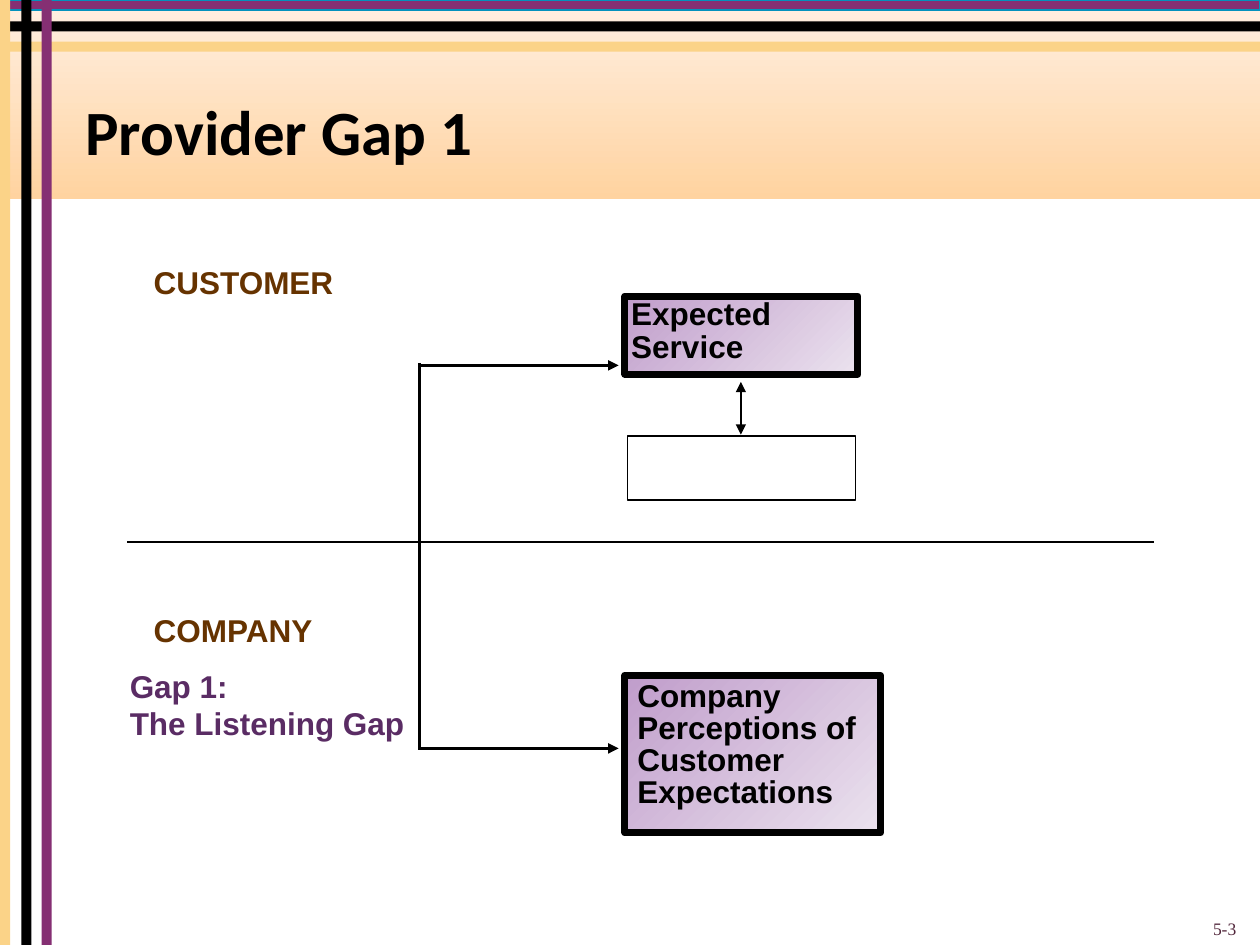
from lxml import etree
from pptx import Presentation
from pptx.dml.color import RGBColor
from pptx.enum.shapes import MSO_CONNECTOR, MSO_SHAPE
from pptx.enum.text import MSO_ANCHOR, PP_ALIGN
from pptx.oxml.ns import qn
from pptx.util import Inches, Pt

RECTANGLE = MSO_SHAPE.RECTANGLE
STRAIGHT = MSO_CONNECTOR.STRAIGHT
TOP, MIDDLE, BOTTOM = MSO_ANCHOR.TOP, MSO_ANCHOR.MIDDLE, MSO_ANCHOR.BOTTOM
LEFT, RIGHT = PP_ALIGN.LEFT, PP_ALIGN.RIGHT

BLACK = RGBColor(0x00, 0x00, 0x00)
PLUM = RGBColor(0x85, 0x2F, 0x73)
GOLD = RGBColor(0xFB, 0xD3, 0x88)
TEAL = RGBColor(0x03, 0x91, 0xBD)
BROWN = RGBColor(0x66, 0x33, 0x00)
VIOLET = RGBColor(0x5A, 0x2C, 0x64)
MAROON = RGBColor(0x51, 0x25, 0x3A)
PEACH = (RGBColor(0xFF, 0xD3, 0xA0), RGBColor(0xFF, 0xF0, 0xE3))
LILAC = (RGBColor(0xC0, 0x9D, 0xCB), RGBColor(0xEB, 0xE2, 0xEE))

WIDTH, HEIGHT, STRIPE = 10, 7.5, 0.08
STRIPE_STARTS = (0, 0.17, 0.33)
WIDE_INSETS, TIGHT_INSETS = (0.1, 0.05), (0.05, 0.02)


def add_rectangle(page, place, color=None, line=None, line_width=1):
    box = page.shapes.add_shape(RECTANGLE, *map(Inches, place))
    box.shadow.inherit = False
    if color is None:
        box.fill.background()
    else:
        box.fill.solid()
        box.fill.fore_color.rgb = color
    if line is None:
        box.line.fill.background()
    else:
        box.line.color.rgb = line
        box.line.width = Pt(line_width)
    return box


def fill_gradient(box, colors, angle):
    box.fill.gradient()
    box.fill.gradient_angle = angle
    for stop, color in zip(box.fill.gradient_stops, colors):
        stop.color.rgb = color


def write_text(box, lines, color, size=18, name="Arial", bold=True, insets=TIGHT_INSETS,
               anchor=TOP, align=LEFT, spacing=1.0, wrap=True):
    across, down = map(Inches, insets)
    frame = box.text_frame
    frame_format = {"margin_left": across, "margin_right": across, "margin_top": down,
                    "margin_bottom": down, "vertical_anchor": anchor, "word_wrap": wrap}
    font_format = {"size": Pt(size), "name": name, "bold": bold}
    for key, value in frame_format.items():
        setattr(frame, key, value)
    for index, line in enumerate(lines):
        para = frame.add_paragraph() if index else frame.paragraphs[0]
        para.alignment = align
        para.line_spacing = spacing
        span = para.add_run()
        span.text = line
        span.font.color.rgb = color
        for key, value in font_format.items():
            setattr(span.font, key, value)


def add_label(page, place, lines, color, **text_format):
    box = page.shapes.add_textbox(*map(Inches, place))
    write_text(box, lines, color, **text_format)


def add_gap_box(page, place, text, **text_format):
    box = add_rectangle(page, place, line=BLACK, line_width=4)
    fill_gradient(box, LILAC, 315)
    write_text(box, [text], BLACK, **text_format)


def add_line(page, start, end, width=1, arrows=()):
    line = page.shapes.add_connector(STRAIGHT, *map(Inches, (*start, *end)))
    line.line.color.rgb = BLACK
    line.line.width = Pt(width)
    outline = line.line._get_or_add_ln()
    for arrow in arrows:
        etree.SubElement(outline, qn(f"a:{arrow}"), type="triangle")
    etree.SubElement(line._element.spPr, qn("a:effectLst"))


def add_frame(page):
    band = add_rectangle(page, (0, 0, WIDTH, 1.58))
    fill_gradient(band, PEACH, 90)
    for top, color, line in zip(STRIPE_STARTS, (PLUM, BLACK, GOLD), (TEAL, None, None)):
        add_rectangle(page, (0, top, WIDTH, STRIPE), color, line, 0)
    for left, color in zip(STRIPE_STARTS, (GOLD, BLACK, PLUM)):
        add_rectangle(page, (left, 0, STRIPE, HEIGHT), color)


def add_diagram(page):
    add_line(page, (1.01, 4.3), (9.16, 4.3))
    add_rectangle(page, (4.98, 3.46, 1.81, 0.51), line=BLACK)
    add_gap_box(page, (4.96, 5.36, 2.03, 1.25),
                "Company Perceptions of Customer Expectations",
                insets=WIDE_INSETS, spacing=0.85)
    add_gap_box(page, (4.96, 2.35, 1.85, 0.62), "Expected Service", spacing=0.88)
    add_label(page, (1.17, 2.07, 1.53, 0.34), ["CUSTOMER"], BROWN, wrap=False)
    add_label(page, (1.17, 4.83, 1.38, 0.34), ["COMPANY"], BROWN, wrap=False)
    add_line(page, (3.33, 2.88), (3.33, 5.95), 2)
    for height in (2.9, 5.94):
        add_line(page, (3.33, height), (4.91, height), 2, ["tailEnd"])
    add_line(page, (5.88, 3.03), (5.88, 3.45), 1, ["headEnd", "tailEnd"])
    add_label(page, (0.98, 5.27, 2.42, 0.64), ["Gap 1:", "The Listening Gap"], VIOLET)


def main():
    deck = Presentation()
    deck.slide_width, deck.slide_height = Inches(WIDTH), Inches(HEIGHT)
    page = deck.slides.add_slide(deck.slide_layouts[6])
    add_frame(page)
    add_diagram(page)
    add_label(page, (0.58, 0.58, 9.25, 1), ["Provider Gap 1"], BLACK, size=36,
              name="Calibri", insets=WIDE_INSETS, anchor=MIDDLE, spacing=0.85)
    add_label(page, (7.58, 7, 2.33, 0.5), ["5-3"], MAROON, size=10, bold=False,
              name="Times New Roman", insets=WIDE_INSETS, anchor=BOTTOM, align=RIGHT)
    deck.save("out.pptx")


if __name__ == "__main__":
    main()
